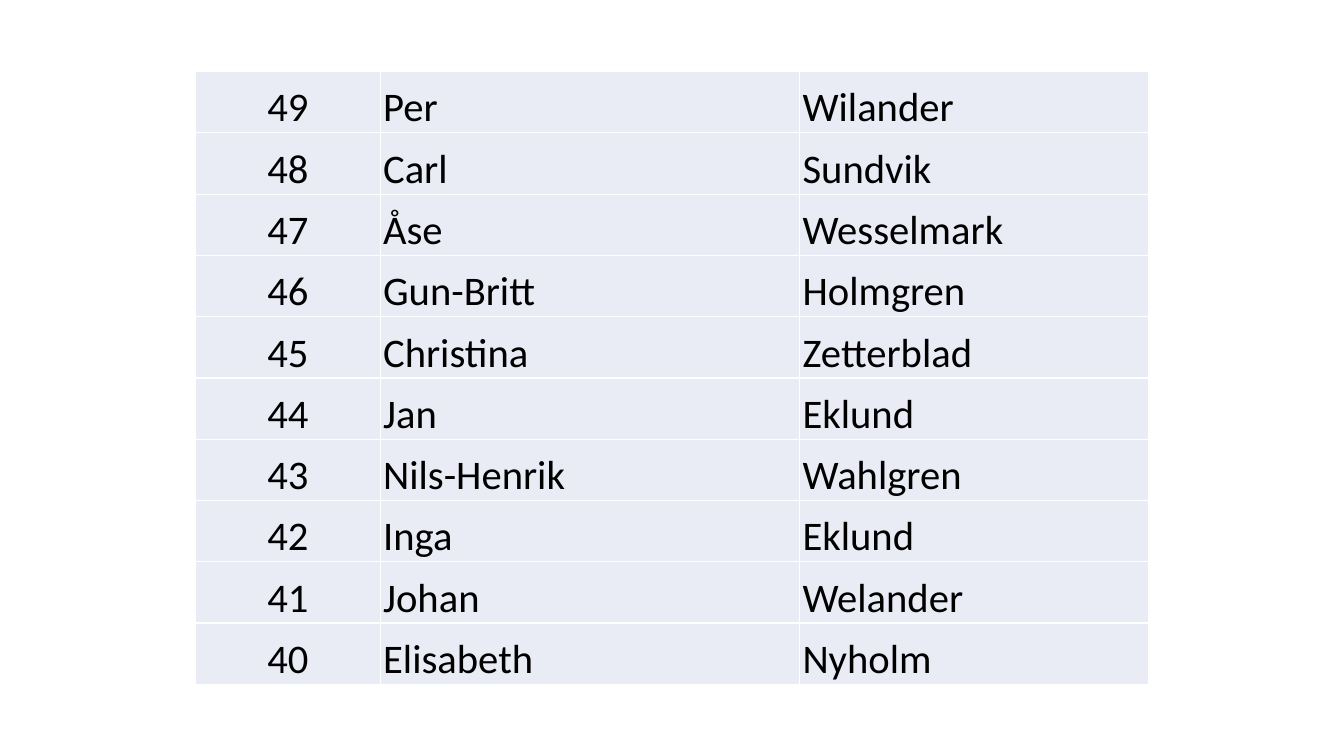
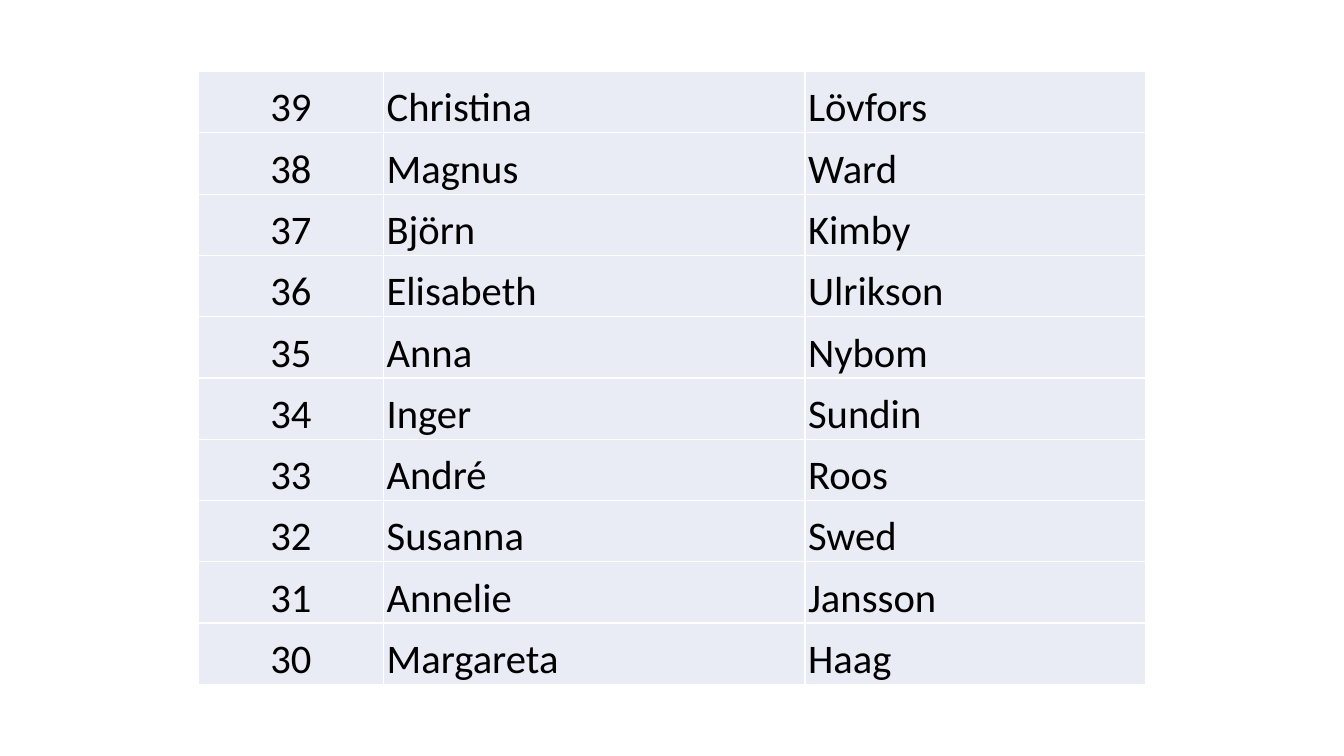
import pptx
import pptx.dml.color
import pptx.enum.text
import pptx.oxml
import pptx.oxml.ns
import pptx.util
from pptx.util import Inches

FONT = "Calibri"
FONT_SIZE = 29
TEXT_COLOR = "000000"
CELL_COLOR = "E9EBF5"
BORDER_COLOR = "FFFFFF"
BORDER_WIDTH = 1
SLIDE_WIDTH, SLIDE_HEIGHT = 13.33, 7.5
TABLE_TOP, TABLE_HEIGHT = 0.71, 6.08
CELL_INSET = 0.03

# Each list: highest number, column widths, and names in descending order
NAME_LISTS = [
    (49, (1.83, 4.16, 3.46), [
        ("Per", "Wilander"),
        ("Carl", "Sundvik"),
        ("Åse", "Wesselmark"),
        ("Gun-Britt", "Holmgren"),
        ("Christina", "Zetterblad"),
        ("Jan", "Eklund"),
        ("Nils-Henrik", "Wahlgren"),
        ("Inga", "Eklund"),
        ("Johan", "Welander"),
        ("Elisabeth", "Nyholm"),
    ]),
    (39, (1.84, 4.18, 3.38), [
        ("Christina", "Lövfors"),
        ("Magnus", "Ward"),
        ("Björn", "Kimby"),
        ("Elisabeth", "Ulrikson"),
        ("Anna", "Nybom"),
        ("Inger", "Sundin"),
        ("André", "Roos"),
        ("Susanna", "Swed"),
        ("Annelie", "Jansson"),
        ("Margareta", "Haag"),
    ]),
]


def rgb(color):
    return pptx.dml.color.RGBColor.from_string(color)


def set_borders(cell):
    """Draw the same thin line on all four sides of a cell."""
    properties = cell._tc.get_or_add_tcPr()
    namespace = pptx.oxml.ns.nsdecls("a")
    for position, side in enumerate(("lnL", "lnR", "lnT", "lnB")):
        line = pptx.oxml.parse_xml(
            f'<a:{side} {namespace} w="{pptx.util.Pt(BORDER_WIDTH)}">'
            f'<a:solidFill><a:srgbClr val="{BORDER_COLOR}"/></a:solidFill>'
            f'</a:{side}>')
        properties.insert(position, line)


def format_cell(cell, text, alignment):
    cell.fill.solid()
    cell.fill.fore_color.rgb = rgb(CELL_COLOR)
    set_borders(cell)
    cell.vertical_anchor = pptx.enum.text.MSO_ANCHOR.BOTTOM
    cell.margin_left = cell.margin_right = cell.margin_top = Inches(CELL_INSET)
    cell.margin_bottom = 0
    paragraph = cell.text_frame.paragraphs[0]
    paragraph.alignment = alignment
    run = paragraph.add_run()
    run.text = text
    run.font.name = FONT
    run.font.size = pptx.util.Pt(FONT_SIZE)
    run.font.color.rgb = rgb(TEXT_COLOR)


def add_name_table(slide, left, top, widths, height, first_number, names):
    """Place a numbered table of first names and surnames."""
    table = slide.shapes.add_table(
        len(names), len(widths), Inches(left), Inches(top),
        Inches(sum(widths)), Inches(height)).table
    table.first_row = table.horz_banding = False
    for column, width in zip(table.columns, widths):
        column.width = Inches(width)

    align = pptx.enum.text.PP_ALIGN
    alignments = (align.CENTER, align.LEFT, align.LEFT)
    for index, (first_name, surname) in enumerate(names):
        texts = (str(first_number - index), first_name, surname)
        for cell, text, alignment in zip(table.rows[index].cells, texts, alignments):
            format_cell(cell, text, alignment)


def add_name_slide(presentation, first_number, widths, names):
    """Add a slide with its table centred across the width."""
    slide = presentation.slides.add_slide(presentation.slide_layouts[6])
    left = (SLIDE_WIDTH - sum(widths)) / 2
    add_name_table(slide, left, TABLE_TOP, widths, TABLE_HEIGHT,
                   first_number, names)


def main():
    presentation = pptx.Presentation()
    presentation.slide_width = Inches(SLIDE_WIDTH)
    presentation.slide_height = Inches(SLIDE_HEIGHT)
    for first_number, widths, names in NAME_LISTS:
        add_name_slide(presentation, first_number, widths, names)
    presentation.save("out.pptx")


if __name__ == "__main__":
    main()
